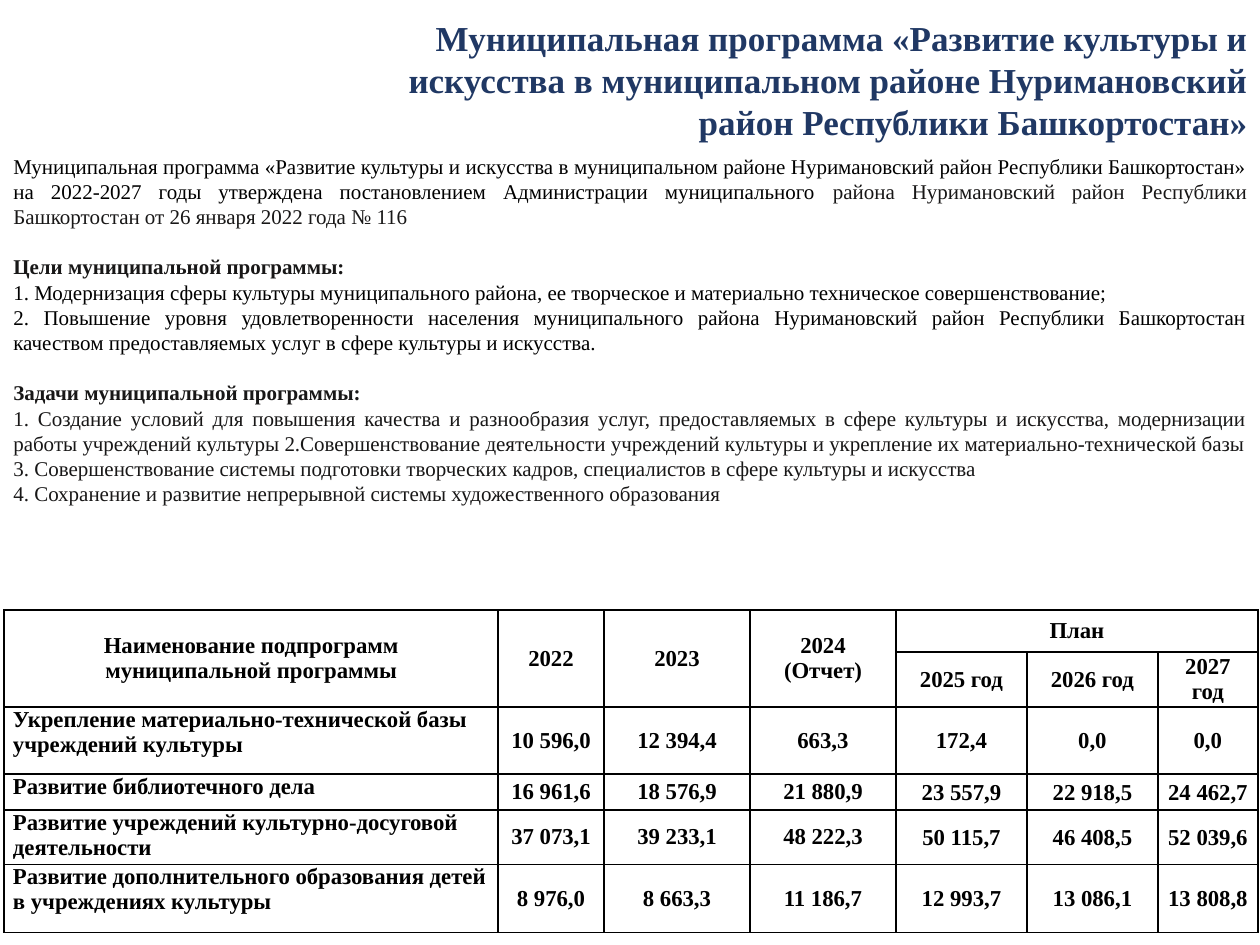
from lxml.etree import SubElement
from pptx import Presentation
from pptx.dml.color import RGBColor
from pptx.enum.text import MSO_ANCHOR as Anchor, MSO_AUTO_SIZE as AutoSize, PP_ALIGN as Align
from pptx.oxml.ns import qn
from pptx.util import Pt

PX = 9144
FONT = "Times New Roman"
BLACK, DARK, NAVY = "000000", "181717", "203864"

TITLE = ("Муниципальная программа «Развитие культуры и искусства в муниципальном районе "
         "Нуримановский район Республики Башкортостан»")
BODY = [
    [("Муниципальная программа «Развитие культуры и искусства в муниципальном районе "
      "Нуримановский район Республики Башкортостан» на 2022-2027 годы утверждена "
      "постановлением Администрации муниципального ", BLACK, False),
     ("района Нуримановский район Республики Башкортостан от 26 января 2022 года № 116",
      DARK, False)],
    [("Цели муниципальной программы:", DARK, True)],
    [("1. Модернизация сферы культуры муниципального района, ее творческое и материально "
      "техническое совершенствование;", BLACK, False)],
    [("2. Повышение уровня удовлетворенности населения муниципального района Нуримановский "
      "район Республики Башкортостан качеством предоставляемых услуг в сфере культуры и "
      "искусства.", BLACK, False)],
    [("Задачи муниципальной программы:", DARK, True)],
    [("1. Создание условий для повышения качества и разнообразия услуг, предоставляемых в "
      "сфере культуры и искусства, модернизации работы учреждений культуры "
      "2.Совершенствование деятельности учреждений культуры и укрепление их "
      "материально-технической базы", DARK, False)],
    [("3. Совершенствование системы подготовки творческих кадров, специалистов в сфере "
      "культуры и искусства", DARK, False)],
    [("4. Сохранение и развитие непрерывной системы художественного образования", DARK, False)],
]
ROWS = [
    ["Наименование подпрограмм\nмуниципальной программы", "2022", "2023", "2024\n(Отчет)",
     "План", "", ""],
    ["", "", "", "", "2025 год", "2026 год", "2027 год"],
    ["Укрепление материально-технической базы учреждений культуры",
     "10 596,0", "12 394,4", "663,3", "172,4", "0,0", "0,0"],
    ["Развитие библиотечного дела",
     "16 961,6", "18 576,9", "21 880,9", "23 557,9", "22 918,5", "24 462,7"],
    ["Развитие учреждений культурно-досуговой деятельности",
     "37 073,1", "39 233,1", "48 222,3", "50 115,7", "46 408,5", "52 039,6"],
    ["Развитие дополнительного образования детей в учреждениях культуры",
     "8 976,0", "8 663,3", "11 186,7", "12 993,7", "13 086,1", "13 808,8"],
]
COL_WIDTHS = [494, 106, 146, 146, 131, 131, 100]
ROW_HEIGHTS = [42, 55, 67, 36, 54, 68]
HEADER_ROWS, PLAN_COL = 2, 4


def px(*values):
    """Turn pixel lengths into EMU."""
    return [round(v * PX * 100 / 126) for v in values]


def add_run(p, text, size, color, bold):
    """Append one formatted run to a paragraph."""
    r = p.add_run()
    r.text = text
    r.font.name, r.font.size, r.font.bold = FONT, Pt(size), bold
    r.font.color.rgb = RGBColor.from_string(color)


def add_title(s):
    """Move and fill the title placeholder."""
    sp = s.shapes.title
    sp.left, sp.top, sp.width, sp.height = px(294, 10, 966, 96)
    tf = sp.text_frame
    tf.word_wrap, tf.auto_size = True, AutoSize.NONE
    tf.vertical_anchor = Anchor.TOP
    p = tf.paragraphs[0]
    p.alignment, p.line_spacing = Align.RIGHT, 1.0
    add_run(p, TITLE, 20, NAVY, True)


def add_body(s):
    """Add the justified description with a gap above each heading."""
    tf = s.shapes.add_textbox(*px(1, 147, 1259, 425)).text_frame
    tf.word_wrap = True
    for i, runs in enumerate(BODY):
        p = tf.paragraphs[0] if i == 0 else tf.add_paragraph()
        p.alignment = Align.JUSTIFY
        if runs[0][2]:
            p.space_before = Pt(14.4)
        for text, color, bold in runs:
            add_run(p, text, 12, color, bold)


def set_borders(cell):
    """Draw a thin black line on all sides of a cell."""
    props = cell._tc.get_or_add_tcPr()
    for i, side in enumerate(("a:lnL", "a:lnR", "a:lnT", "a:lnB")):
        ln = props.makeelement(qn(side), {"w": str(Pt(1))})
        SubElement(SubElement(ln, qn("a:solidFill")), qn("a:srgbClr"), val=BLACK)
        props.insert(i, ln)


def add_budget_table(s):
    """Add the table of subprogramme budgets."""
    table = s.shapes.add_table(len(ROWS), len(COL_WIDTHS), *px(
        4, 610, sum(COL_WIDTHS), sum(ROW_HEIGHTS))).table
    for col, width in zip(table.columns, px(*COL_WIDTHS)):
        col.width = width
    for row, height in zip(table.rows, px(*ROW_HEIGHTS)):
        row.height = height
    for i, row in enumerate(ROWS):
        for j, text in enumerate(row):
            cell = table.cell(i, j)
            is_name = i >= HEADER_ROWS and j == 0
            is_plan = i >= HEADER_ROWS and j >= PLAN_COL
            side, top = (1, 1) if is_plan else (9, 0)
            cell.margin_left, cell.margin_right, cell.margin_top, cell.margin_bottom = px(
                side, side, top, 0)
            cell.vertical_anchor = Anchor.TOP if is_name else Anchor.MIDDLE
            cell.fill.background()
            set_borders(cell)
            for k, line in enumerate(text.split("\n") if text else []):
                p = cell.text_frame.paragraphs[0] if k == 0 else cell.text_frame.add_paragraph()
                p.alignment = Align.LEFT if is_name else Align.CENTER
                add_run(p, line, 13, BLACK, True)
    for j in range(PLAN_COL):
        table.cell(0, j).merge(table.cell(1, j))
    table.cell(0, PLAN_COL).merge(table.cell(0, len(COL_WIDTHS) - 1))


def main():
    """Build and save the slide."""
    prs = Presentation()
    prs.slide_width, prs.slide_height = px(1260, 945)
    s = prs.slides.add_slide(prs.slide_layouts[5])
    add_title(s)
    add_body(s)
    add_budget_table(s)
    prs.save("out.pptx")


if __name__ == "__main__":
    main()
